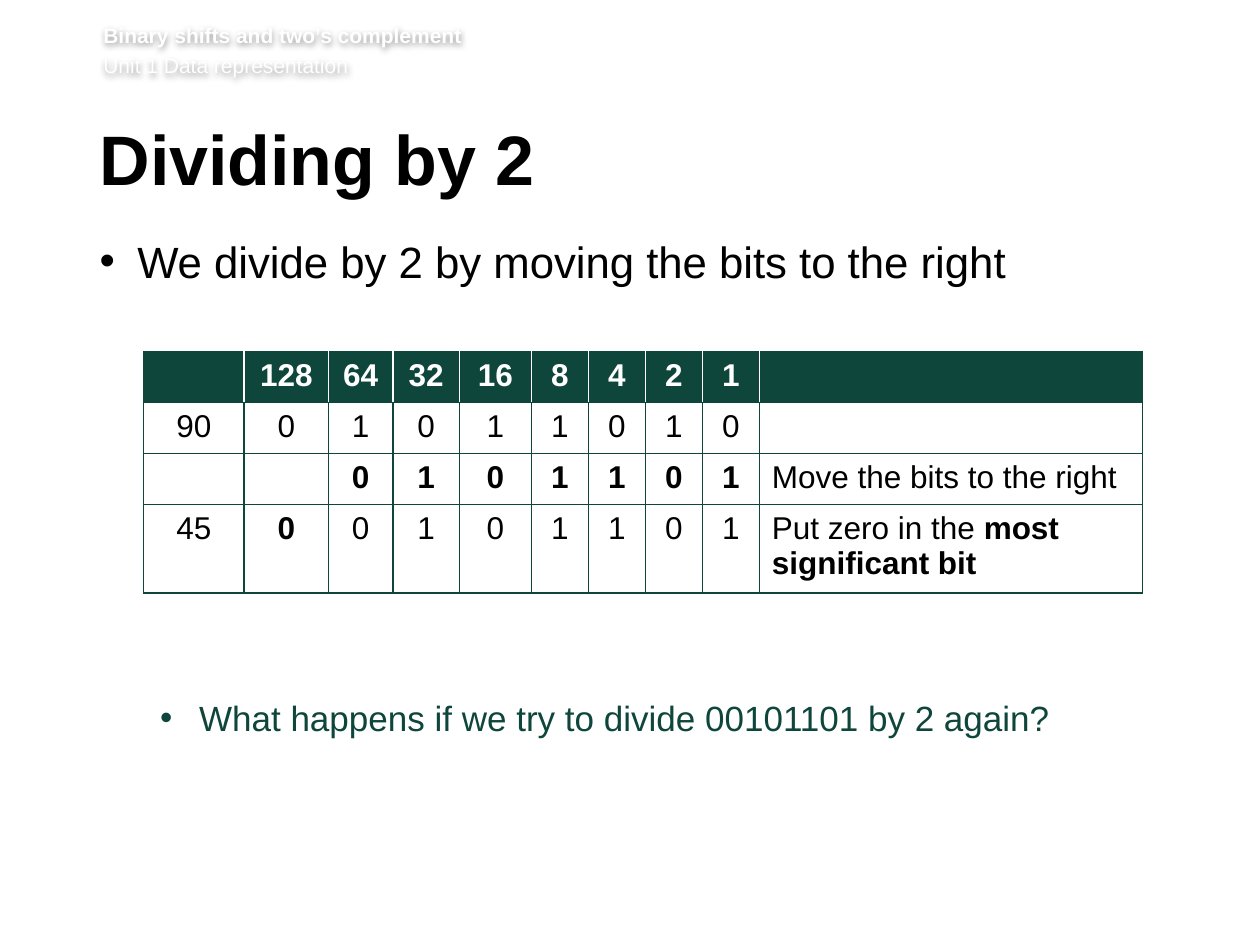
from dataclasses import dataclass

from lxml import etree
from pptx import Presentation
from pptx.dml.color import RGBColor
from pptx.enum.text import PP_ALIGN
from pptx.oxml.ns import qn
from pptx.util import Emu, Inches, Pt

CENTER, LEFT = PP_ALIGN.CENTER, PP_ALIGN.LEFT
GREEN = RGBColor(0x0E, 0x46, 0x3C)
WHITE = RGBColor(0xFF, 0xFF, 0xFF)
BLACK = RGBColor(0x00, 0x00, 0x00)
FONT = "Arial"
WIDE, HIGH = Inches(10), Inches(7.5)
COLS, ROWS = 100, 75  # layout grid of the slide


@dataclass
class Area:
    """A place on the layout grid, in columns and rows."""
    left: float
    top: float
    wide: float
    high: float

    def place(self) -> tuple:
        return across(self.left), down(self.top), across(self.wide), down(self.high)


@dataclass
class Line:
    """A table row: label, bits, note as (text, bold) runs, bold bits."""
    label: str
    bits: list
    note: tuple = ()
    bold: tuple = ()


def across(cols: float) -> Emu:
    return Emu(round(WIDE * cols / COLS))


def down(rows: float) -> Emu:
    return Emu(round(HIGH * rows / ROWS))


def write(para, text: str, size=18, color=BLACK, bold=False, align=LEFT,
          before=0, after=0, line=None) -> None:
    para.alignment = align
    para.space_before, para.space_after = Pt(before), Pt(after)
    if line:
        para.line_spacing = Pt(line)
    run = para.add_run()
    run.text = text
    font = run.font
    font.name, font.size, font.bold = FONT, Pt(size), bold
    font.color.rgb = color


def bullet(para, left: float, hang: float) -> None:
    props = para._p.get_or_add_pPr()
    props.set("marL", str(across(left)))
    props.set("indent", str(-across(hang)))
    etree.SubElement(props, qn("a:buFont")).set("typeface", FONT)
    etree.SubElement(props, qn("a:buChar")).set("char", "•")


def shade(box) -> None:
    """Put a soft dark shadow behind the letters of an unfilled box."""
    effects = etree.SubElement(box._element.spPr, qn("a:effectLst"))
    shadow = etree.SubElement(effects, qn("a:outerShdw"), blurRad="50800",
                              dist="12700", dir="5400000", algn="t")
    color = etree.SubElement(shadow, qn("a:srgbClr"), val=str(BLACK))
    etree.SubElement(color, qn("a:alpha"), val="40000")


def add_box(slide, area: Area, inset: tuple):
    box = slide.shapes.add_textbox(*area.place())
    frame = box.text_frame
    frame.word_wrap = True
    (frame.margin_left, frame.margin_top,
     frame.margin_right, frame.margin_bottom) = map(across, inset)
    return box


def style(cell, fill: RGBColor, left: RGBColor, right: RGBColor) -> None:
    props = cell._tc.get_or_add_tcPr()
    for side, color in zip("LRTB", (left, right, GREEN, GREEN)):
        edge = etree.SubElement(props, qn(f"a:ln{side}"), w=str(Pt(1)))
        paint = etree.SubElement(edge, qn("a:solidFill"))
        etree.SubElement(paint, qn("a:srgbClr"), val=str(color))
    cell.fill.solid()
    cell.fill.fore_color.rgb = fill


def add_grid(slide, area: Area, widths: list, lines: list) -> None:
    table = slide.shapes.add_table(len(lines), len(widths), *area.place()).table
    table.horz_banding = False
    for col, wide in zip(table.columns, widths):
        col.width = across(wide)
    last = len(widths) - 1
    for r, line in enumerate(lines):
        head = r == 0
        ink, fill = (WHITE, GREEN) if head else (BLACK, WHITE)
        for c, text in enumerate([line.label, *line.bits]):
            if text:
                write(table.cell(r, c).text_frame.paragraphs[0], text, color=ink,
                      bold=head or c in line.bold, align=CENTER)
        for text, bold in line.note:
            write(table.cell(r, last).text_frame.paragraphs[0], text, bold=bold)
        for c in range(last + 1):
            style(table.cell(r, c), fill,
                  WHITE if head and c > 0 else GREEN,
                  WHITE if head and c < last else GREEN)


def main() -> None:
    deck = Presentation()
    deck.slide_width, deck.slide_height = WIDE, HIGH
    slide = deck.slides.add_slide(deck.slide_layouts[6])

    # Running header
    head = add_box(slide, Area(8.2, 1.8, 88.2, 4.9), (0, 0, 0, 0.5))
    shade(head)
    write(head.text_frame.paragraphs[0], "Binary shifts and two’s complement",
          size=12, color=WHITE, bold=True)
    write(head.text_frame.add_paragraph(), "Unit 1 Data representation",
          size=12, color=WHITE, before=2.9)

    # Title
    title = add_box(slide, Area(7.9, 9.9, 85.5, 7.3), (0, 0.5, 1, 0.5))
    write(title.text_frame.paragraphs[0], "Dividing by 2",
          size=40, bold=True, line=39, after=15)

    # Statement above the table and question below it
    body = add_box(slide, Area(7.9, 18.6, 85.3, 37.8), (0, 0, 1, 0.5))
    point = body.text_frame.paragraphs[0]
    bullet(point, 3, 3)
    write(point, "We divide by 2 by moving the bits to the right", size=25, after=14)
    ask = body.text_frame.add_paragraph()
    bullet(ask, 7.9, 3.1)
    write(ask, "What happens if we try to divide 00101101 by 2 again?",
          size=20, color=GREEN, before=220, after=12)

    # Place values and the shifted bits; the last row grows with its note
    lines = [
        Line("", [str(2 ** n) for n in range(7, -1, -1)]),
        Line("90", list("01011010")),
        Line("", ["", *"0101101"], (("Move the bits to the right", False),),
             tuple(range(2, 9))),
        Line("45", list("00101101"),
             (("Put zero in the ", False), ("most significant bit", True)), (1,)),
    ]
    widths = [7.98, 6.7, 5.1, 5.3, 5.7, 4.55, 4.5, 4.55, 4.5, 30.4]
    add_grid(slide, Area(11.4, 27.9, sum(widths), 4.05 * len(lines)), widths, lines)

    deck.save("out.pptx")


if __name__ == "__main__":
    main()
